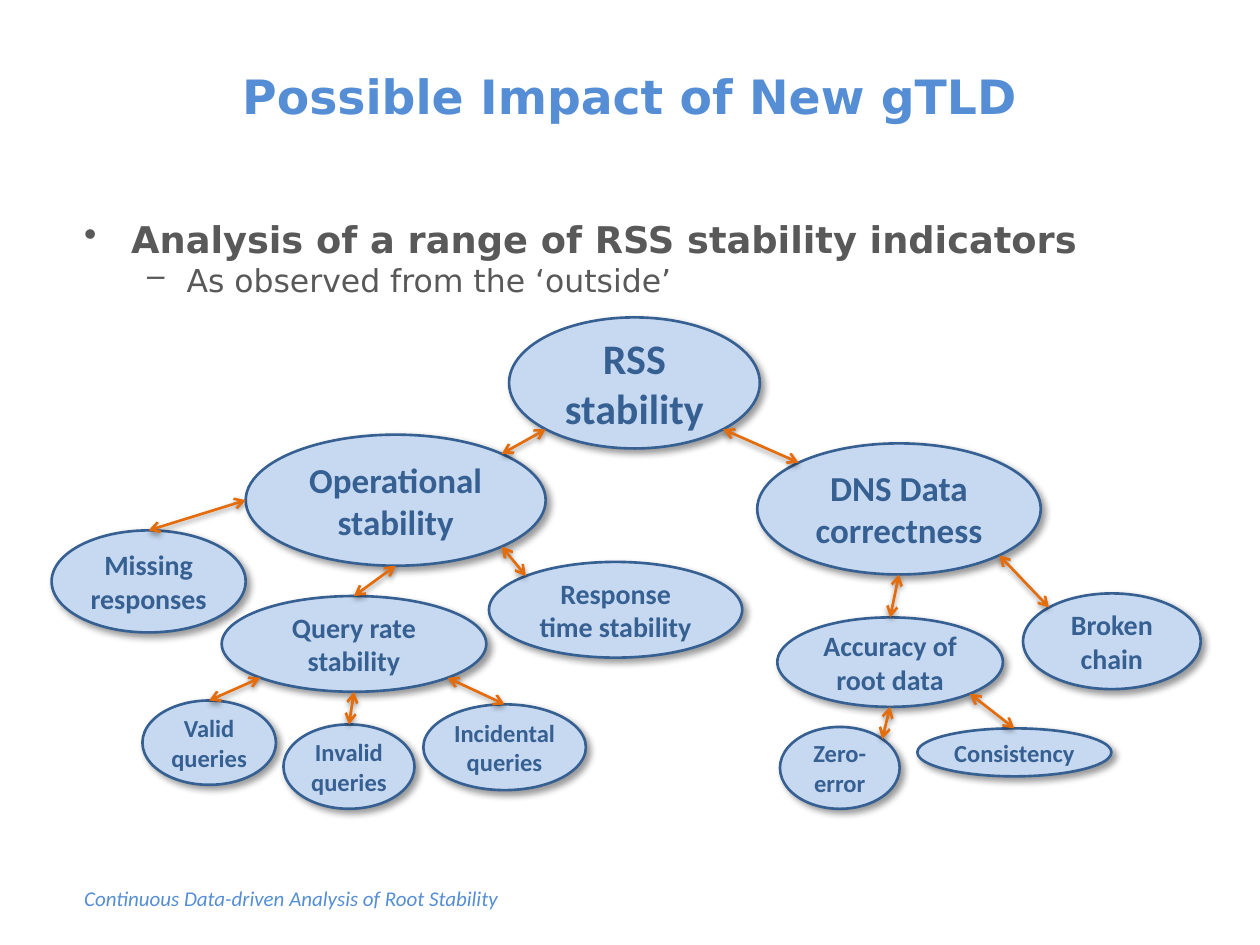
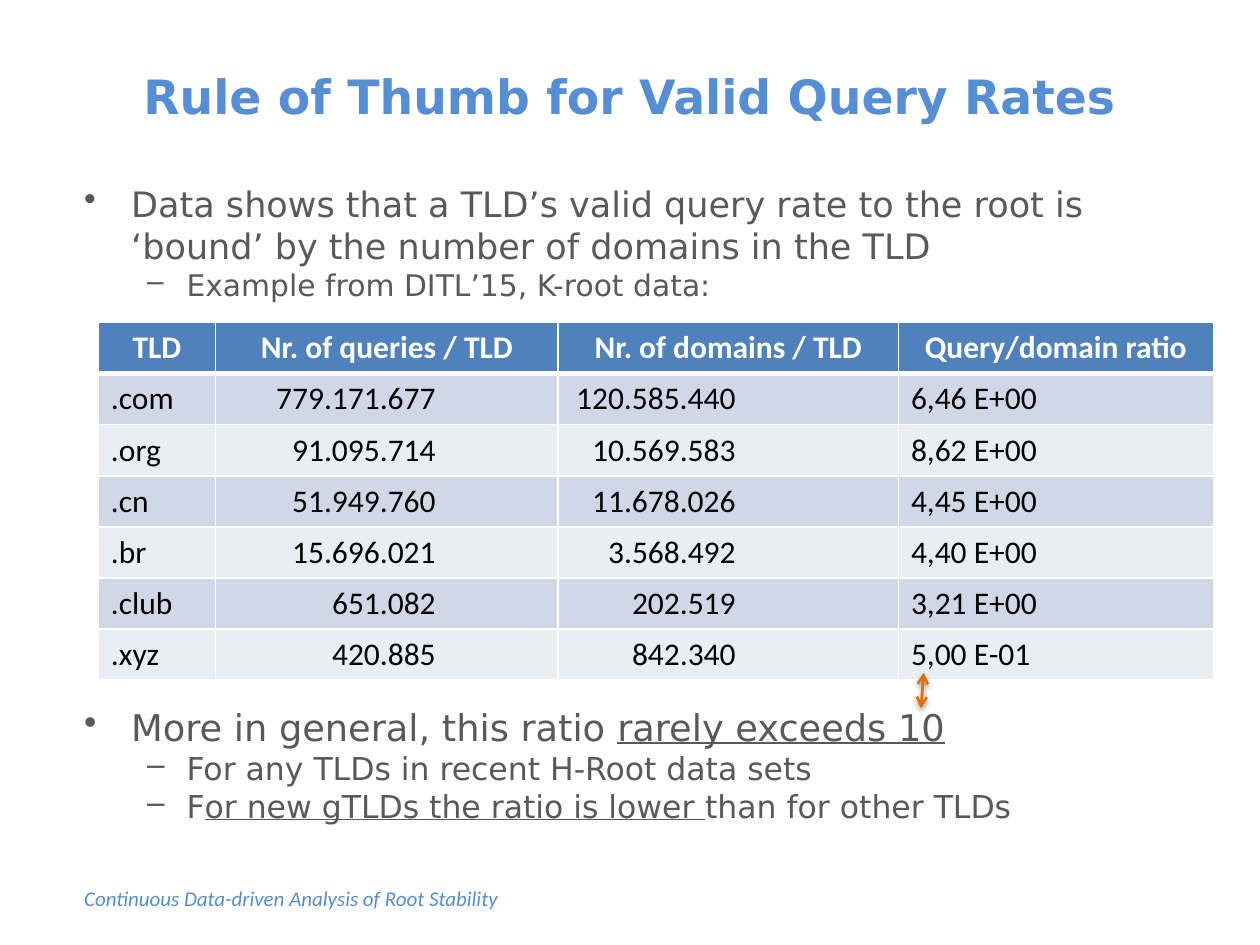
from lxml import etree
from pptx import Presentation
from pptx.dml.color import RGBColor
from pptx.enum.shapes import MSO_CONNECTOR, MSO_SHAPE
from pptx.enum.text import MSO_ANCHOR, PP_ALIGN
from pptx.oxml.ns import qn
from pptx.util import Pt

STRAIGHT, OVAL = MSO_CONNECTOR.STRAIGHT, MSO_SHAPE.OVAL
MIDDLE = MSO_ANCHOR.MIDDLE
LEFT, CENTER, RIGHT = PP_ALIGN.LEFT, PP_ALIGN.CENTER, PP_ALIGN.RIGHT

TITLE_BLUE = RGBColor(0x55, 0x8E, 0xD5)
BODY_GREY = RGBColor(0x59, 0x59, 0x59)
NODE_FILL = RGBColor(0xC6, 0xD9, 0xF1)
NODE_BLUE = RGBColor(0x37, 0x60, 0x92)
ARROW_ORANGE = RGBColor(0xE4, 0x6C, 0x0A)
HEADER_BLUE = RGBColor(0x4F, 0x81, 0xBD)
BANDS = RGBColor(0xD0, 0xD8, 0xE8), RGBColor(0xE9, 0xED, 0xF4)
WHITE = RGBColor(0xFF, 0xFF, 0xFF)
BLACK = RGBColor(0, 0, 0)
HEAD_FONT, TEXT_FONT = "DejaVu Sans", "Calibri"

# Shadows: opacity %, blur, distance, angle
NODE_SHADOW = (40, 4, 3, 45)
ARROW_SHADOW = (38, 3.1, 1.6, 90)

# Content
FOOTER = "Continuous Data-driven Analysis of Root Stability"
IMPACT_TITLE = "Possible Impact of New gTLD"
RATES_TITLE = "Rule of Thumb for Valid Query Rates"

# Bullets: level, size, bold, space before, spans of (text, underlined)
IMPACT_BULLETS = [
    (0, 21, True, 0, [("Analysis of a range of RSS stability indicators", False)]),
    (1, 18, False, 0, [("As observed from the ‘outside’", False)]),
]
RATES_BULLETS = [
    (0, 20, False, 0, [("Data shows that a TLD’s valid query rate to the root is "
                        "‘bound’ by the number of domains in the TLD", False)]),
    (1, 17, False, 0, [("Example from DITL’15, K-root data:", False)]),
    (0, 21, False, 230, [("More in general, this ratio ", False),
                         ("rarely exceeds 10", True)]),
    (1, 18, False, 0, [("For any TLDs in recent H-Root data sets", False)]),
    (1, 18, False, 0, [("F", False), ("or new gTLDs the ratio is lower ", True),
                       ("than for other TLDs", False)]),
]

# Points where arrows meet an ellipse, numbered counter-clockwise from the top
TOP, TOP_LEFT, SIDE_LEFT, BOTTOM_LEFT, BOTTOM, BOTTOM_RIGHT, _, TOP_RIGHT = range(8)
NEAR, FAR = 0.146, 0.854
SITES = [(0.5, 0), (NEAR, NEAR), (0, 0.5), (NEAR, FAR),
         (0.5, 1), (FAR, FAR), (1, 0.5), (FAR, NEAR)]

# Tree: name, (left, top, width, height), size, side inset
NODES = [
    ("RSS stability", (290.9, 181.4, 143.3, 74.9), 24, 7.2),
    ("Operational stability", (140.4, 248.4, 171.4, 74.9), 20, 7.2),
    ("DNS Data correctness", (432.7, 253.4, 162, 74.9), 20, 7.2),
    ("Missing responses", (29.5, 303.1, 110.9, 58.3), 16, 4.3),
    ("Query rate stability", (126.7, 340.6, 151.2, 54.7), 16, 7.2),
    ("Response time stability", (279.4, 321.1, 144.7, 54.7), 16, 4.3),
    ("Accuracy of root data", (444.2, 352.8, 128.9, 51.1), 16, 4.3),
    ("Broken chain", (584.6, 339.1, 101.5, 54.7), 16, 4.3),
    ("Valid queries", (81.4, 400.3, 76.3, 48.2), 14, 4.3),
    ("Invalid queries", (162, 414, 74.9, 48.2), 14, 4.3),
    ("Incidental queries", (241.9, 402.5, 92.9, 49), 14, 2.9),
    ("Zero-error", (445.7, 415.4, 68.4, 46.8), 14, 4.3),
    ("Consistency", (524.2, 416.2, 110.9, 27.4), 14, 1.4),
]
LINKS = [
    ("Operational stability", TOP_RIGHT, "RSS stability", BOTTOM_LEFT),
    ("DNS Data correctness", TOP_LEFT, "RSS stability", BOTTOM_RIGHT),
    ("Missing responses", TOP, "Operational stability", SIDE_LEFT),
    ("Query rate stability", TOP, "Operational stability", BOTTOM),
    ("Response time stability", TOP_LEFT, "Operational stability", BOTTOM_RIGHT),
    ("Accuracy of root data", TOP, "DNS Data correctness", BOTTOM),
    ("Broken chain", TOP_LEFT, "DNS Data correctness", BOTTOM_RIGHT),
    ("Valid queries", TOP, "Query rate stability", BOTTOM_LEFT),
    ("Invalid queries", TOP, "Query rate stability", BOTTOM),
    ("Incidental queries", TOP, "Query rate stability", BOTTOM_RIGHT),
    ("Zero-error", TOP_RIGHT, "Accuracy of root data", BOTTOM),
    ("Consistency", TOP, "Accuracy of root data", BOTTOM_RIGHT),
]

RATES = [
    ("TLD", "Nr. of queries / TLD", "Nr. of domains / TLD", "Query/domain ratio"),
    (".com", "779.171.677", "120.585.440", "6,46 E+00"),
    (".org", "91.095.714", "10.569.583", "8,62 E+00"),
    (".cn", "51.949.760", "11.678.026", "4,45 E+00"),
    (".br", "15.696.021", "3.568.492", "4,40 E+00"),
    (".club", "651.082", "202.519", "3,21 E+00"),
    (".xyz", "420.885", "842.340", "5,00 E-01"),
]
ROW_HEIGHT = 29.2
# Columns: width, alignment of the values, right margin of the values
RATE_COLUMNS = [(67, LEFT, 7.2), (195.8, RIGHT, 70), (194.4, RIGHT, 93), (180, LEFT, 7.2)]


def add_element(parent, tag, **attributes):
    element = etree.SubElement(parent, qn(tag))
    for name, value in attributes.items():
        element.set(name, str(value))
    return element


def style(span, size, color, font=TEXT_FONT, bold=False, italic=False):
    span.font.size = Pt(size)
    span.font.name = font
    span.font.bold = bold
    span.font.italic = italic
    span.font.color.rgb = color


def add_shadow(shape, opacity, blur, distance, angle):
    effects = add_element(shape._element.spPr, "a:effectLst")
    shadow = add_element(effects, "a:outerShdw", blurRad=int(Pt(blur)),
                         dist=int(Pt(distance)), dir=angle * 60000,
                         algn="tl", rotWithShape=0)
    color = add_element(shadow, "a:srgbClr", val=BLACK)
    add_element(color, "a:alpha", val=opacity * 1000)


def add_text(slide, area, text, wrap=True):
    box = slide.shapes.add_textbox(*map(Pt, area))
    box.text_frame.word_wrap = wrap
    box.text_frame.text = text
    return box.text_frame


def add_base_slide(deck, title):
    """Blank slide with the shared footer and title."""
    slide = deck.slides.add_slide(deck.slide_layouts[6])
    footer = add_text(slide, (41, 502.6, 260, 21.6), FOOTER, wrap=False)
    style(footer.paragraphs[0].runs[0], 12, TITLE_BLUE, italic=True)
    frame = add_text(slide, (41, 21.6, 637.2, 65.5), title)
    frame.vertical_anchor = MIDDLE
    frame.paragraphs[0].alignment = CENTER
    style(frame.paragraphs[0].runs[0], 27, TITLE_BLUE, HEAD_FONT, bold=True)
    return slide


def add_bullets(slide, area, bullets):
    frame = add_text(slide, area, "")
    for index, (level, size, bold, space, spans) in enumerate(bullets):
        para = frame.add_paragraph() if index else frame.paragraphs[0]
        para.level = level
        para.space_before = Pt(space)
        indent, hanging, mark = [(26.9, 26.9, "•"), (58.5, 22.5, "–")][level]
        properties = para._p.get_or_add_pPr()
        properties.set("marL", str(int(Pt(indent))))
        properties.set("indent", str(-int(Pt(hanging))))
        add_element(properties, "a:buChar", char=mark)
        for text, underlined in spans:
            span = para.add_run()
            span.text = text
            style(span, size, BODY_GREY, HEAD_FONT, bold)
            span.font.underline = underlined


def add_node(slide, name, area, size, inset):
    node = slide.shapes.add_shape(OVAL, *map(Pt, area))
    node.fill.solid()
    node.fill.fore_color.rgb = NODE_FILL
    node.line.color.rgb = NODE_BLUE
    node.line.width = Pt(1.5)
    add_shadow(node, *NODE_SHADOW)
    frame = node.text_frame
    frame.word_wrap = True
    frame.vertical_anchor = MIDDLE
    frame.margin_left = frame.margin_right = Pt(inset)
    frame.text = name
    frame.paragraphs[0].alignment = CENTER
    style(frame.paragraphs[0].runs[0], size, NODE_BLUE, bold=True)
    return node


def add_arrow(slide, start, end):
    arrow = slide.shapes.add_connector(STRAIGHT, *start, *end)
    arrow.line.color.rgb = ARROW_ORANGE
    arrow.line.width = Pt(1.5)
    for tag in ("a:headEnd", "a:tailEnd"):
        add_element(arrow.line._get_or_add_ln(), tag, type="arrow")
    add_shadow(arrow, *ARROW_SHADOW)
    return arrow


def site_point(node, site):
    across, down = SITES[site]
    return (int(node.left + across * node.width),
            int(node.top + down * node.height))


def link_nodes(slide, child, child_site, parent, parent_site):
    arrow = add_arrow(slide, site_point(child, child_site),
                      site_point(parent, parent_site))
    joints = arrow._element.nvCxnSpPr.cNvCxnSpPr
    add_element(joints, "a:stCxn", id=child.shape_id, idx=child_site)
    add_element(joints, "a:endCxn", id=parent.shape_id, idx=parent_site)


def add_borders(cell, row):
    properties = cell._tc.get_or_add_tcPr()
    for side in "LRTB":
        thick = (row, side) in [(0, "B"), (1, "T")]
        line = add_element(properties, f"a:ln{side}", w=int(Pt(3 if thick else 1)))
        add_element(add_element(line, "a:solidFill"), "a:srgbClr", val=WHITE)


def add_rates_table(slide):
    total_width = sum(width for width, _, _ in RATE_COLUMNS)
    table = slide.shapes.add_table(
        len(RATES), len(RATE_COLUMNS), Pt(56.2), Pt(184.3),
        Pt(total_width), Pt(ROW_HEIGHT * len(RATES))).table
    for column, (width, _, _) in zip(table.columns, RATE_COLUMNS):
        column.width = Pt(width)
    for row, values in enumerate(RATES):
        table.rows[row].height = Pt(ROW_HEIGHT)
        header = row == 0
        for column, value in enumerate(values):
            _, alignment, margin = RATE_COLUMNS[column]
            cell = table.cell(row, column)
            add_borders(cell, row)
            cell.fill.solid()
            cell.fill.fore_color.rgb = HEADER_BLUE if header else BANDS[(row - 1) % 2]
            cell.margin_right = Pt(7.2 if header else margin)
            cell.text_frame.text = value
            para = cell.text_frame.paragraphs[0]
            para.alignment = CENTER if header else alignment
            style(para.runs[0], 18, WHITE if header else BLACK, bold=header)


def main():
    deck = Presentation()
    deck.slide_width, deck.slide_height = Pt(720), Pt(540)

    # Tree of stability indicators
    slide = add_base_slide(deck, IMPACT_TITLE)
    add_bullets(slide, (41, 120.2, 663.1, 354.2), IMPACT_BULLETS)
    nodes = {node[0]: add_node(slide, *node) for node in NODES}
    for child, child_site, parent, parent_site in LINKS:
        link_nodes(slide, nodes[child], child_site, nodes[parent], parent_site)

    # Query rates per TLD
    slide = add_base_slide(deck, RATES_TITLE)
    add_bullets(slide, (41, 100.8, 663.8, 373), RATES_BULLETS)
    add_rates_table(slide)
    add_arrow(slide, (Pt(527.8), Pt(384.5)), (Pt(526.3), Pt(404.6)))

    deck.save("out.pptx")


if __name__ == "__main__":
    main()
